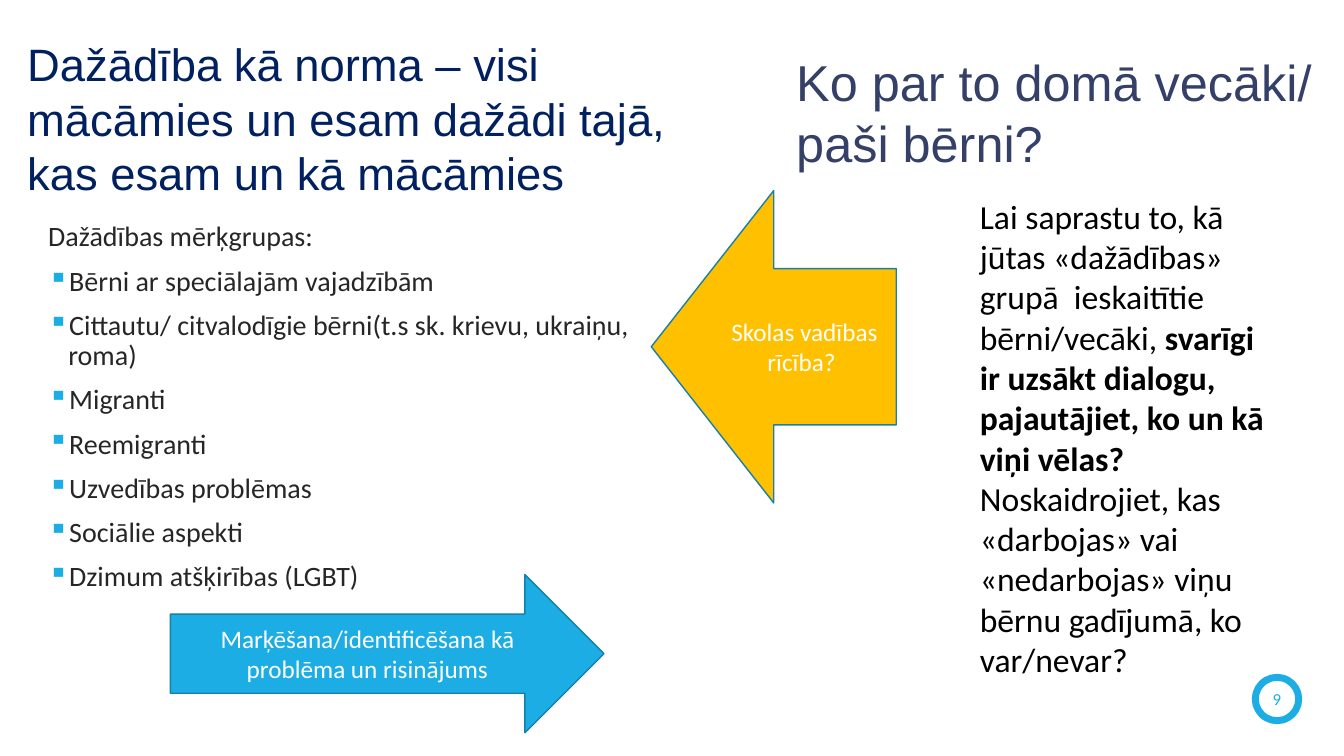
from dataclasses import dataclass

from lxml.etree import SubElement
from pptx import Presentation
from pptx.dml.color import RGBColor
from pptx.enum.shapes import MSO_SHAPE as Preset
from pptx.enum.text import MSO_ANCHOR as Anchor, PP_ALIGN as Align
from pptx.oxml.ns import qn
from pptx.util import Inches, Pt

SLIDE_W, SLIDE_H = Inches(13.33), Inches(7.5)
WHITE = RGBColor(0xFF, 0xFF, 0xFF)
BLACK = RGBColor(0x00, 0x00, 0x00)
NAVY = RGBColor(0x00, 0x20, 0x60)
SLATE = RGBColor(0x34, 0x40, 0x68)
CHARCOAL = RGBColor(0x26, 0x26, 0x26)
SKY = RGBColor(0x1C, 0xAD, 0xE4)
TEAL = RGBColor(0x15, 0x80, 0xA9)
AMBER = RGBColor(0xFF, 0xC0, 0x00)


@dataclass(frozen=True)
class Area:
    """Left, top, width and height in percent of the slide."""
    left: float
    top: float
    width: float
    height: float

    def lengths(self) -> tuple[int, int, int, int]:
        return (int(SLIDE_W * self.left / 100), int(SLIDE_H * self.top / 100),
                int(SLIDE_W * self.width / 100), int(SLIDE_H * self.height / 100))


@dataclass(frozen=True)
class Figure:
    preset: Preset
    area: Area
    fill: RGBColor
    outline: RGBColor
    weight: float
    label: str
    size: float
    ink: RGBColor
    inset: bool = True


@dataclass(frozen=True)
class Run:
    text: str
    bold: bool = False


FIGURES = [
    Figure(Preset.OVAL, Area(93.4, 89.6, 3.23, 5.73), WHITE, SKY, 5,
           "9", 12, SKY, inset=False),
    Figure(Preset.LEFT_ARROW, Area(48.46, 25.2, 18.23, 41.33), AMBER, TEAL, 1,
           "Skolas vadības rīcība? ", 18, WHITE),
    Figure(Preset.RIGHT_ARROW, Area(12.68, 76, 32.26, 20.93), SKY, TEAL, 1,
           "Marķēšana/identificēšana kā problēma un risinājums", 18, WHITE),
]
TARGET_GROUPS = [
    "Bērni ar speciālajām vajadzībām",
    "Cittautu/ citvalodīgie bērni(t.s sk. krievu, ukraiņu, roma)",
    "Migranti",
    "Reemigranti",
    "Uzvedības problēmas",
    "Sociālie aspekti",
    "Dzimum atšķirības (LGBT)",
]
DIALOGUE = [
    [Run("Lai saprastu to, kā jūtas «dažādības» grupā  ieskaitītie bērni/vecāki, "),
     Run("svarīgi ir uzsākt dialogu, pajautājiet, ko un kā viņi vēlas?", bold=True)],
    [Run("Noskaidrojiet, kas «darbojas» vai «nedarbojas» viņu bērnu gadījumā, ko var/nevar?")],
]


def write(frame, paragraphs: list[list[Run]], *, size: float, ink: RGBColor,
          font: str = "Calibri", align: Align = Align.LEFT,
          anchor: Anchor = Anchor.TOP, before: float = 0, leading: float = 1.0) -> None:
    frame.word_wrap = True
    frame.vertical_anchor = anchor
    for index, runs in enumerate(paragraphs):
        paragraph = frame.add_paragraph() if index else frame.paragraphs[0]
        paragraph.alignment = align
        paragraph.space_before = Pt(before)
        paragraph.line_spacing = leading
        for piece in runs:
            run = paragraph.add_run()
            run.text = piece.text
            run.font.name = font
            run.font.size = Pt(size)
            run.font.bold = piece.bold
            run.font.color.rgb = ink


def add_bullet(paragraph, color: RGBColor) -> None:
    properties = paragraph._p.get_or_add_pPr()
    properties.set("marL", str(Inches(0.2)))
    properties.set("indent", str(-Inches(0.2)))
    bullet_color = SubElement(properties, qn("a:buClr"))
    SubElement(bullet_color, qn("a:srgbClr")).set("val", str(color))
    SubElement(properties, qn("a:buChar")).set("char", "▪")


def add_text(slide, area: Area, paragraphs: list[list[Run]], **text_format):
    box = slide.shapes.add_textbox(*area.lengths())
    write(box.text_frame, paragraphs, **text_format)
    return box


def add_figure(slide, figure: Figure) -> None:
    shape = slide.shapes.add_shape(figure.preset, *figure.area.lengths())
    shape.shadow.inherit = False
    shape.fill.solid()
    shape.fill.fore_color.rgb = figure.fill
    shape.line.color.rgb = figure.outline
    shape.line.width = Pt(figure.weight)
    frame = shape.text_frame
    if not figure.inset:
        frame.margin_left = frame.margin_right = 0
        frame.margin_top = frame.margin_bottom = 0
    write(frame, [[Run(figure.label)]], size=figure.size, ink=figure.ink,
          align=Align.CENTER, anchor=Anchor.MIDDLE)


def main() -> None:
    deck = Presentation()
    deck.slide_width, deck.slide_height = SLIDE_W, SLIDE_H
    slide = deck.slides.add_slide(deck.slide_layouts[6])

    # Left heading
    heading = add_text(
        slide, Area(1.28, 6.13, 49.06, 18.93),
        [[Run("Dažādība kā norma – visi mācāmies un esam dažādi tajā, kas esam un kā mācāmies")]],
        size=32.4, ink=NAVY, font="Arial", anchor=Anchor.MIDDLE)
    heading.fill.solid()
    heading.fill.fore_color.rgb = WHITE

    # Target groups
    groups = add_text(
        slide, Area(2.85, 28.8, 48.54, 61.73),
        [[Run(line)] for line in ["Dažādības mērķgrupas:", *TARGET_GROUPS]],
        size=20, ink=CHARCOAL, before=10, leading=0.9)
    for paragraph in groups.text_frame.paragraphs[1:]:
        add_bullet(paragraph, SKY)

    # Page number and arrows
    for figure in FIGURES:
        add_figure(slide, figure)

    # Right heading and the call for dialogue
    add_text(slide, Area(58.51, 6.13, 40.51, 17.47),
             [[Run("Ko par to domā vecāki/ paši bērni?")]],
             size=36, ink=SLATE, font="Arial")
    add_text(slide, Area(72.17, 25.2, 22.88, 66), DIALOGUE, size=24, ink=BLACK)

    deck.save("out.pptx")


if __name__ == "__main__":
    main()
